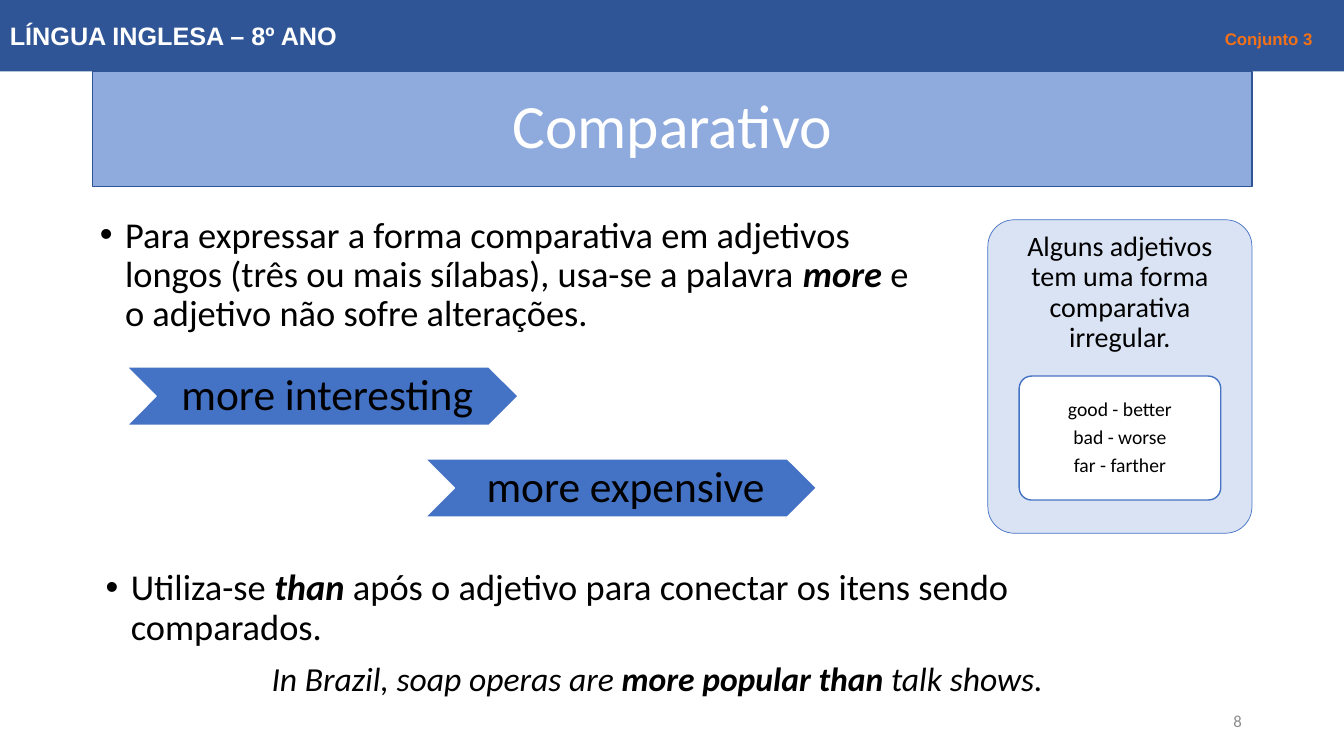
from dataclasses import dataclass

from lxml.etree import SubElement
from pptx import Presentation
from pptx.dml.color import RGBColor
from pptx.enum.shapes import MSO_SHAPE as Preset
from pptx.enum.text import MSO_ANCHOR as Anchor, MSO_AUTO_SIZE as AutoSize, PP_ALIGN as Align
from pptx.oxml.ns import qn
from pptx.util import Emu, Inches, Pt

WIDTH, HEIGHT = Inches(13.33), Inches(7.5)
WHITE, BLACK, ORANGE, GRAY = "FFFFFF", "000000", "F47116", "8C8C8C"
NAVY, BLUE, SOFT_BLUE, PALE_BLUE = "2F5597", "4472C4", "8FAADC", "DAE3F3"
DEFAULT_INSETS = (0.1, 0.05, 0.1, 0.05)


@dataclass
class Box:
    """Position and size in percent of the slide."""
    left: float
    top: float
    width: float
    height: float

    def lengths(self) -> tuple:
        return tuple(Emu(int(share * side / 100)) for share, side in
                     zip((self.left, self.top, self.width, self.height), (WIDTH, HEIGHT) * 2))


@dataclass
class Panel:
    box: Box
    preset: Preset
    fill: str
    line: str | None = None
    line_width: float = 1
    corner: float | None = None


def color(code: str) -> RGBColor:
    return RGBColor.from_string(code)


def place(shape, box: Box):
    shape.left, shape.top, shape.width, shape.height = box.lengths()
    return shape


def paint(shape, fill: str, line: str | None, line_width: float = 1) -> None:
    shape.fill.solid()
    shape.fill.fore_color.rgb = color(fill)
    if line:
        shape.line.color.rgb = color(line)
        shape.line.width = Pt(line_width)
    else:
        shape.line.fill.background()


def add_panel(slide, panel: Panel):
    shape = slide.shapes.add_shape(panel.preset, *panel.box.lengths())
    shape.shadow.inherit = False
    paint(shape, panel.fill, panel.line, panel.line_width)
    if panel.corner is not None:
        shape.adjustments[0] = panel.corner
    return shape


def prepare_frame(shape, anchor=Anchor.TOP, insets=DEFAULT_INSETS):
    frame = shape.text_frame
    frame.word_wrap = True
    frame.auto_size = AutoSize.NONE
    frame.vertical_anchor = anchor
    (frame.margin_left, frame.margin_top,
     frame.margin_right, frame.margin_bottom) = map(Inches, insets)
    return frame


def write(paragraph, text: str, *, size: float, code: str = BLACK, font: str = "Calibri",
          bold: bool = False, italic: bool = False) -> None:
    run = paragraph.add_run()
    run.text = text
    run.font.size, run.font.name = Pt(size), font
    run.font.bold, run.font.italic = bold, italic
    run.font.color.rgb = color(code)


def format_paragraph(paragraph, align=Align.CENTER, spacing: float = 0.9,
                     before: float = 0, after: float = 0):
    paragraph.alignment = align
    paragraph.line_spacing = spacing
    paragraph.space_before, paragraph.space_after = Pt(before), Pt(after)
    return paragraph


def add_bullet(paragraph) -> None:
    properties = paragraph._p.get_or_add_pPr()
    properties.set("marL", str(Inches(0.25)))
    properties.set("indent", str(Inches(-0.25)))
    SubElement(properties, qn("a:buFont"), typeface="Arial")
    SubElement(properties, qn("a:buChar"), char="•")


def add_right_tab(paragraph, position: float) -> None:
    tabs = SubElement(paragraph._p.get_or_add_pPr(), qn("a:tabLst"))
    SubElement(tabs, qn("a:tab"), pos=str(Inches(position)), algn="r")


def write_rule(paragraph, opening: str, keyword: str, ending: str) -> None:
    """Bulleted grammar rule with its key word in bold italics."""
    format_paragraph(paragraph, Align.LEFT, before=10)
    add_bullet(paragraph)
    write(paragraph, opening, size=26)
    write(paragraph, keyword, size=26, bold=True, italic=True)
    write(paragraph, ending, size=26)


def add_title_and_rule(slide) -> None:
    title = place(slide.shapes.title, Box(6.9, 9.45, 86.25, 15.2))
    paint(title, SOFT_BLUE, NAVY)
    heading = format_paragraph(prepare_frame(title, Anchor.MIDDLE).paragraphs[0])
    write(heading, "Comparativo", size=44, code=WHITE)
    body = place(slide.placeholders[1], Box(6.68, 28, 63.38, 18.27))
    write_rule(prepare_frame(body).paragraphs[0],
               "Para expressar a forma comparativa em adjetivos longos "
               "(três ou mais sílabas), usa-se a palavra ",
               "more", " e o adjetivo não sofre alterações.")


def add_header(slide) -> None:
    header = add_panel(slide, Panel(Box(0, 0, 100, 9.45), Preset.RECTANGLE, NAVY))
    paragraph = format_paragraph(prepare_frame(header, Anchor.MIDDLE).paragraphs[0],
                                 Align.LEFT, spacing=1)
    add_right_tab(paragraph, 12.92)
    write(paragraph, "LÍNGUA INGLESA – 8º ANO\t", size=18, code=WHITE, font="Arial", bold=True)
    write(paragraph, "Conjunto 3", size=12, code=ORANGE, font="Arial", bold=True)


def add_irregular_forms(slide) -> None:
    panel = add_panel(slide, Panel(Box(73.5, 29.07, 19.65, 41.47), Preset.ROUNDED_RECTANGLE,
                                   PALE_BLUE, BLUE, 0.5, 0.1))
    write(format_paragraph(prepare_frame(panel).paragraphs[0]),
          "Alguns adjetivos tem uma forma comparativa irregular.", size=20)
    card = add_panel(slide, Panel(Box(75.83, 49.75, 15, 16.4), Preset.ROUNDED_RECTANGLE,
                                  WHITE, BLUE, 1, 0.1))
    frame = prepare_frame(card, Anchor.MIDDLE, (0.04, 0.03, 0.04, 0.03))
    for index, pair in enumerate(("good - better", "bad - worse", "far - farther")):
        paragraph = frame.add_paragraph() if index else frame.paragraphs[0]
        write(format_paragraph(paragraph, after=5), pair, size=14)


def add_chevrons(slide) -> None:
    for index, example in enumerate(("more interesting", "more expensive")):
        box = Box(9.45 + 22.2 * index, 48.55 + 12.15 * index, 29.1, 7.7)
        chevron = add_panel(slide, Panel(box, Preset.CHEVRON, BLUE, WHITE))
        frame = prepare_frame(chevron, Anchor.MIDDLE, (0.14, 0.05, 0.05, 0.05))
        write(format_paragraph(frame.paragraphs[0]), example, size=31)


def add_than_rule(slide) -> None:
    box = slide.shapes.add_textbox(*Box(7.12, 74.67, 83.55, 18.27).lengths())
    frame = prepare_frame(box)
    write_rule(frame.paragraphs[0], "Utiliza-se ", "than",
               " após o adjetivo para conectar os itens sendo comparados.")
    example = format_paragraph(frame.add_paragraph(), before=10)
    write(example, "In Brazil, soap operas are ", size=24, italic=True)
    write(example, "more popular than ", size=24, bold=True, italic=True)
    write(example, "talk shows.", size=24, italic=True)


def add_page_number(slide) -> None:
    box = slide.shapes.add_textbox(*Box(70.65, 92.67, 22.5, 5.33).lengths())
    paragraph = prepare_frame(box, Anchor.MIDDLE).paragraphs[0]
    write(format_paragraph(paragraph, Align.RIGHT, spacing=1), "8", size=12, code=GRAY)


def main() -> None:
    presentation = Presentation()
    presentation.slide_width, presentation.slide_height = WIDTH, HEIGHT
    slide = presentation.slides.add_slide(presentation.slide_layouts[1])
    add_title_and_rule(slide)
    add_page_number(slide)
    add_header(slide)
    add_irregular_forms(slide)
    add_chevrons(slide)
    add_than_rule(slide)
    presentation.save("out.pptx")


if __name__ == "__main__":
    main()
